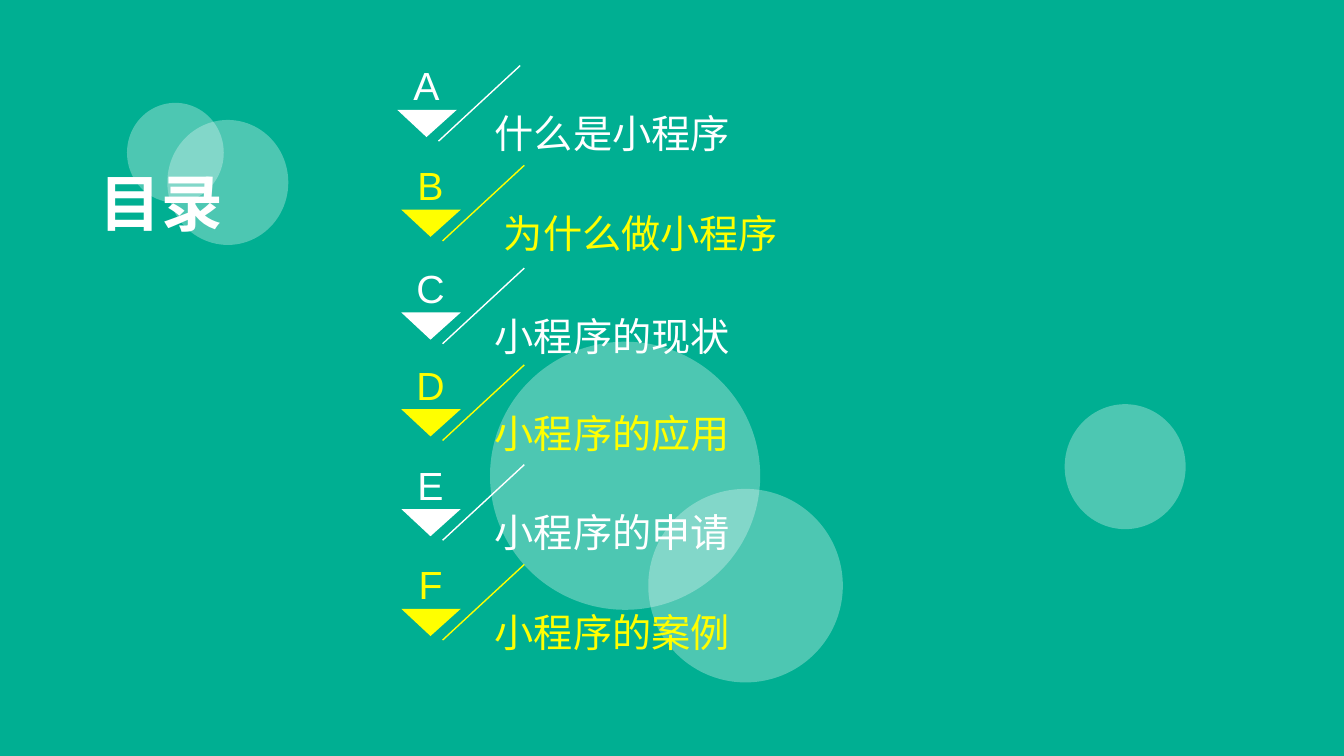
from lxml import etree
from pptx import Presentation
from pptx.dml.color import RGBColor
from pptx.enum import shapes, text
from pptx.oxml import ns
from pptx.util import Inches, Pt

GREEN = RGBColor(0x00, 0xAF, 0x92)
WHITE = RGBColor(0xFF, 0xFF, 0xFF)
YELLOW = RGBColor(0xFF, 0xFF, 0x00)
CJK_FONT = "Noto Sans CJK SC"


def write(frame, words, color, font, align, frame_format):
    for name, value in frame_format.items():
        setattr(frame, name, value)
    paragraph = frame.paragraphs[0]
    paragraph.alignment = align
    run = paragraph.add_run()
    run.text = words
    for name, value in font.items():
        setattr(run.font, name, value)
    run.font.color.rgb = color
    east_asian = etree.SubElement(run.font._element, ns.qn("a:ea"))
    east_asian.set("typeface", CJK_FONT)


deck = Presentation()
deck.slide_width, deck.slide_height = Inches(13.33), Inches(7.5)
slide = deck.slides.add_slide(deck.slide_layouts[5])
slide.background.fill.solid()
slide.background.fill.fore_color.rgb = GREEN

heading = slide.shapes.title
heading.left, heading.top = Inches(0.89), Inches(1.59)
heading.width, heading.height = Inches(1.7), Inches(0.84)
write(heading.text_frame, "目录", WHITE,
      {"size": Pt(44), "bold": True, "name": CJK_FONT}, text.PP_ALIGN.LEFT,
      {"word_wrap": True, "vertical_anchor": text.MSO_ANCHOR.TOP,
       "auto_size": text.MSO_AUTO_SIZE.SHAPE_TO_FIT_TEXT})

bubbles = [
    (4.86, 3.39, 2.68, 2.66),
    (6.43, 4.85, 1.93, 1.92),
    (10.56, 4.01, 1.2, 1.24),
    (1.26, 1.02, 0.96, 0.99),
    (1.66, 1.19, 1.2, 1.24),
]
for place in bubbles:
    bubble = slide.shapes.add_shape(shapes.MSO_SHAPE.OVAL, *map(Inches, place))
    bubble.shadow.inherit = False
    bubble.fill.solid()
    bubble.fill.fore_color.rgb = WHITE
    bubble.line.fill.background()
    tint = bubble._element.spPr.find(".//" + ns.qn("a:srgbClr"))
    etree.SubElement(tint, ns.qn("a:alpha")).set("val", "30000")

entry_font = {"size": Pt(28), "name": "Arial"}
topic_format = {"word_wrap": True, "vertical_anchor": text.MSO_ANCHOR.MIDDLE}
letter_format = {"word_wrap": True, "vertical_anchor": text.MSO_ANCHOR.BOTTOM,
                 "margin_left": 0, "margin_right": 0, "margin_top": 0, "margin_bottom": 0}

entries = [
    ("A", "什么是小程序", 3.94, 4.81, 1.09),
    ("B", "为什么做小程序", 3.98, 4.9, 2.08),
    ("C", "小程序的现状", 3.98, 4.81, 3.1),
    ("D", "小程序的应用", 3.98, 4.81, 4.06),
    ("E", "小程序的申请", 3.98, 4.81, 5.05),
    ("F", "小程序的案例", 3.98, 4.81, 6.04),
]
for index, (letter, topic, left, topic_left, top) in enumerate(entries):
    color = YELLOW if index % 2 else WHITE
    entry = slide.shapes.add_group_shape().shapes

    slash = entry.add_connector(
        shapes.MSO_CONNECTOR.STRAIGHT, Inches(left + 1.22), Inches(top - 0.44),
        Inches(left + 0.41), Inches(top + 0.31))
    slash.line.color.rgb = color
    slash.line.width = Pt(1)
    etree.SubElement(slash._element.spPr, ns.qn("a:effectLst"))

    outline = entry.build_freeform(Inches(left), Inches(top))
    outline.add_line_segments([(Inches(left + 0.59), Inches(top)),
                               (Inches(left + 0.29), Inches(top + 0.27))])
    pointer = outline.convert_to_shape()
    pointer.shadow.inherit = False
    pointer.fill.solid()
    pointer.fill.fore_color.rgb = color
    pointer.line.fill.background()

    topic_box = entry.add_textbox(Inches(topic_left), Inches(top - 0.11), Inches(6.07), Inches(0.68))
    write(topic_box.text_frame, topic, color, entry_font, text.PP_ALIGN.LEFT, topic_format)
    letter_box = entry.add_textbox(Inches(left - 0.02), Inches(top - 0.61), Inches(0.62), Inches(0.6))
    write(letter_box.text_frame, letter, color, entry_font, text.PP_ALIGN.CENTER, letter_format)

deck.save("out.pptx")
